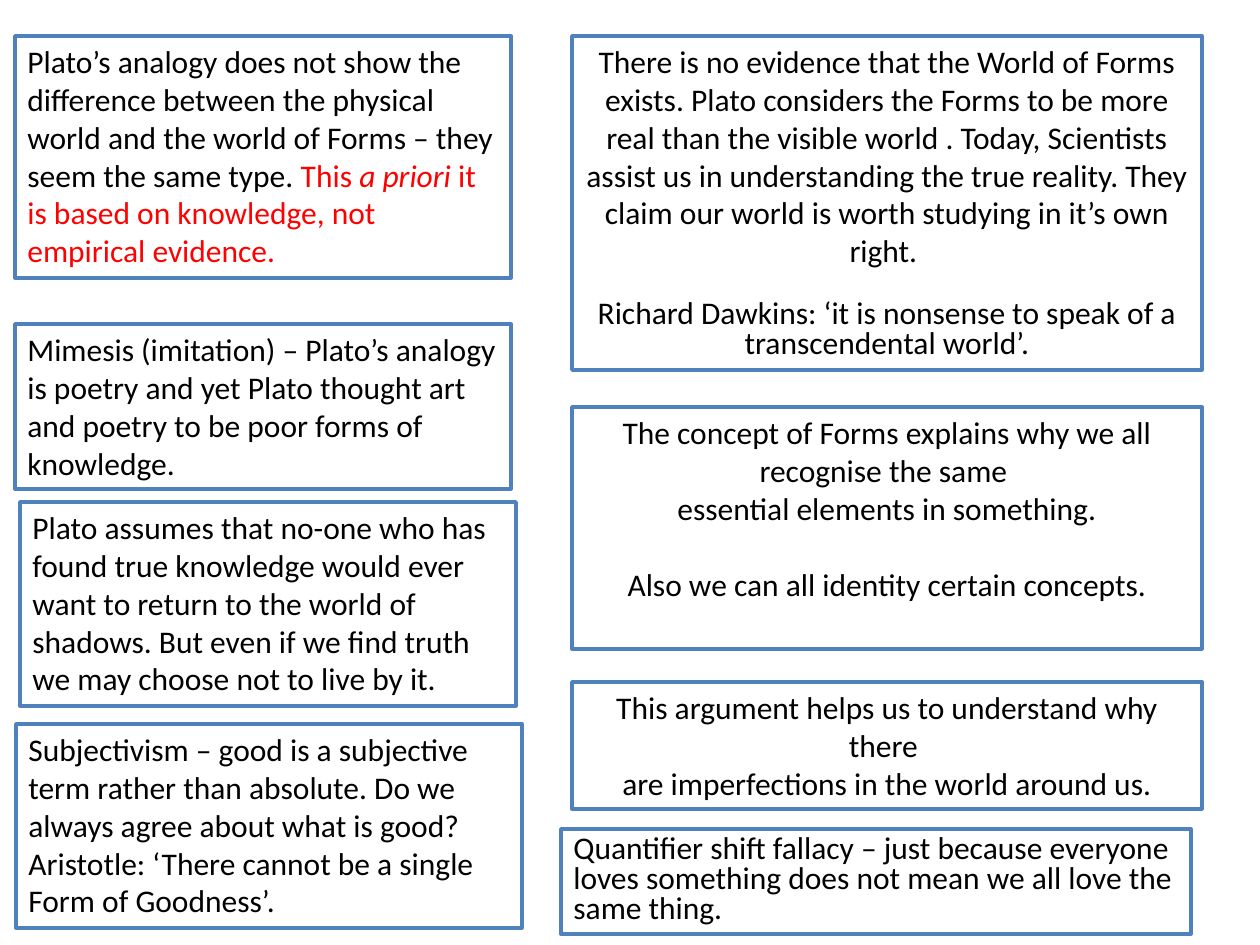
from pptx import Presentation
from pptx import util as u
from pptx.dml.color import RGBColor
from pptx.enum import shapes, text

PX = 914400 // 126
BLUE = RGBColor(0x4F, 0x81, 0xBD)
WHITE = RGBColor(0xFF, 0xFF, 0xFF)
BLACK = RGBColor(0, 0, 0)
RED = RGBColor(0xFF, 0, 0)
LEFT, CENTER = text.PP_ALIGN.LEFT, text.PP_ALIGN.CENTER

# Paragraph: (runs, line spacing, points before); run: (words, colour, italic)


def plain(words, spacing=1.0, before=0):
    return [(words, BLACK, False)], spacing, before


ANALOGY = [([
    ("Plato’s analogy does not show the difference between the physical world "
     "and the world of Forms – they seem the same type. ", BLACK, False),
    ("This ", RED, False),
    ("a priori ", RED, True),
    ("it is based on knowledge, not empirical evidence.", RED, False),
], 1.0, 0)]

# (left, top, width, height) in px, alignment, paragraphs
BOXES = [
    ((15, 36, 496, 242), LEFT, ANALOGY),
    ((15, 324, 496, 165), LEFT, [
        plain("Mimesis (imitation) – Plato’s analogy is poetry and yet Plato "
              "thought art and poetry to be poor forms of knowledge.")]),
    ((20, 502, 496, 204), LEFT, [
        plain("Plato assumes that no-one who has found true knowledge would ever "
              "want to return to the world of shadows. But even if we find truth "
              "we may choose not to live by it.")]),
    ((16, 724, 506, 204), LEFT, [
        plain("Subjectivism – good is a subjective term rather than absolute. "
              "Do we always agree about what is good? Aristotle: ‘There cannot "
              "be a single Form of Goodness’.")]),
    ((572, 36, 630, 334), CENTER, [
        plain("There is no evidence that the World of Forms exists. Plato "
              "considers the Forms to be more real than the visible world . "
              "Today, Scientists assist us in understanding the true reality. "
              "They claim our world is worth studying in it’s own right. "),
        plain("Richard Dawkins: ‘it is nonsense to speak of a transcendental "
              "world’.", 0.8, 17.6)]),
    ((572, 407, 630, 242), CENTER, [
        plain("The concept of Forms explains why we all recognise the same "),
        plain("essential elements in something."),
        plain("Also we can all identity certain concepts.", before=22)]),
    ((572, 682, 630, 127), CENTER, [
        plain("This argument helps us to understand why there "),
        plain("are imperfections in the world around us.")]),
    ((561, 829, 630, 105), LEFT, [
        plain("Quantifier shift fallacy – just because everyone loves something "
              "does not mean we all love the same thing.", 0.8)]),
]


def add_box(s, place, align, paragraphs):
    sp = s.shapes.add_shape(shapes.MSO_SHAPE.RECTANGLE, *(n * PX for n in place))
    sp.shadow.inherit = False
    sp.fill.solid()
    sp.fill.fore_color.rgb = WHITE
    sp.line.color.rgb = BLUE
    sp.line.width = u.Pt(2)
    tf = sp.text_frame
    tf.word_wrap = True
    tf.vertical_anchor = text.MSO_ANCHOR.TOP
    for i, (runs, spacing, before) in enumerate(paragraphs):
        p = tf.add_paragraph() if i else tf.paragraphs[0]
        p.alignment = align
        p.line_spacing = spacing
        p.space_before = u.Pt(before)
        p.font.name = "Calibri"
        p.font.size = u.Pt(18)
        for words, colour, italic in runs:
            r = p.add_run()
            r.text = words
            r.font.color.rgb = colour
            r.font.italic = italic


prs = Presentation()
prs.slide_width, prs.slide_height = 1260 * PX, 945 * PX
s = prs.slides.add_slide(prs.slide_layouts[6])
for box in BOXES:
    add_box(s, *box)
prs.save("out.pptx")
